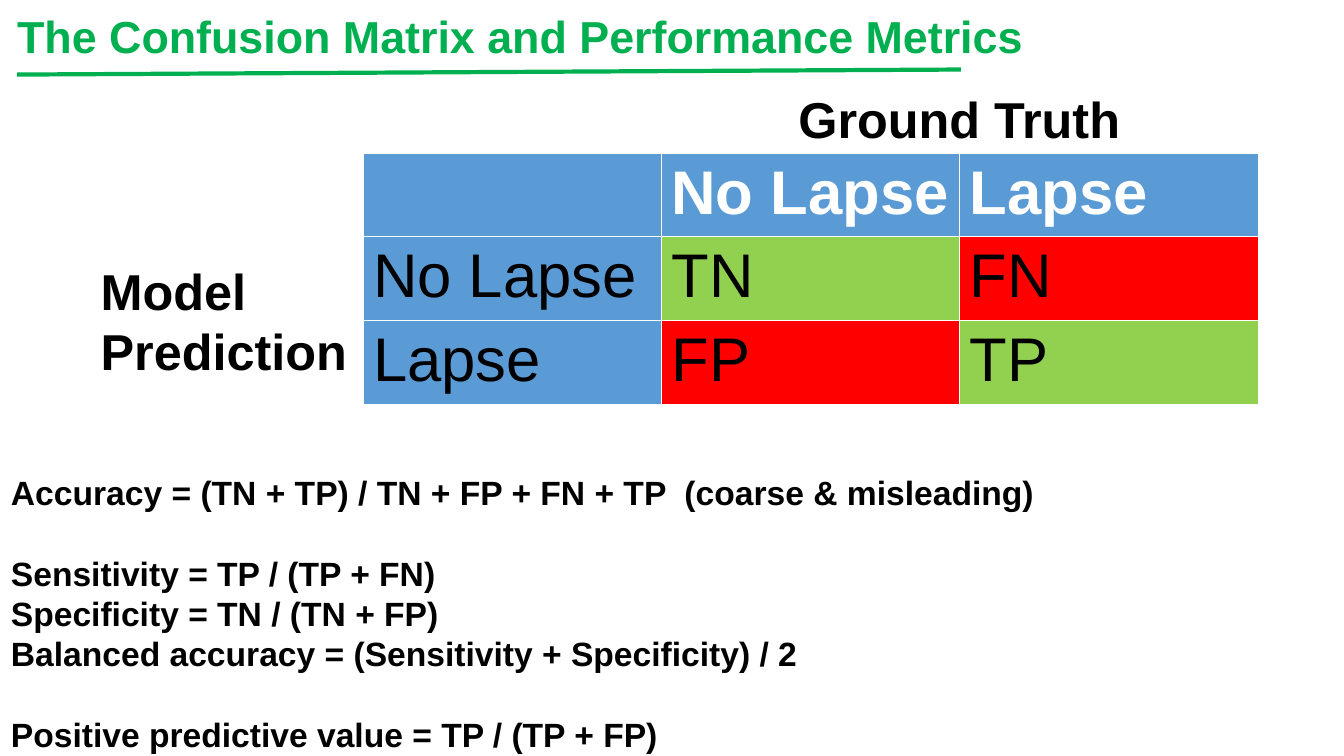
from pptx import Presentation
from pptx.dml.color import RGBColor
from pptx.enum.shapes import MSO_CONNECTOR as Conn
from pptx.enum.text import MSO_ANCHOR as Anchor, PP_ALIGN as Align
from pptx.oxml.ns import qn
from pptx.util import Inches, Pt

# Content
TITLE = "The Confusion Matrix and Performance Metrics"
TRUTH = ["Ground Truth"]
MODEL = ["Model", "Prediction"]
GRID = [
    [("", "blue"), ("No Lapse", "blue"), ("Lapse", "blue")],
    [("No Lapse", "blue"), ("TN", "lime"), ("FN", "red")],
    [("Lapse", "blue"), ("FP", "red"), ("TP", "lime")],
]
GROUPS = [
    ["Accuracy = (TN + TP) / TN + FP + FN + TP  (coarse & misleading)"],
    ["Sensitivity = TP / (TP + FN)",
     "Specificity = TN / (TN + FP)",
     "Balanced accuracy = (Sensitivity + Specificity) / 2"],
    ["Positive predictive value = TP / (TP + FP)"],
]
COLORS = {"green": "00B050", "blue": "5B9BD5", "lime": "92D050",
          "red": "FF0000", "black": "000000", "white": "FFFFFF"}
COL_W, ROW_H = 2.96, 0.83
GAP = 29  # points, one line of 24 pt text


def rgb(name):
    return RGBColor.from_string(COLORS[name])


def style(para, size, color="black", bold=True):
    font = para.font
    font.name, font.size, font.bold = "Arial", Pt(size), bold
    font.color.rgb = rgb(color)


def place(shape, *box):
    shape.left, shape.top, shape.width, shape.height = map(Inches, box)


def add_text(slide, box, groups, size, wrap):
    frame = slide.shapes.add_textbox(*map(Inches, box)).text_frame
    frame.word_wrap = wrap
    frame.text = "\n".join(line for group in groups for line in group)
    paras = iter(frame.paragraphs)
    for g, group in enumerate(groups):
        for n in range(len(group)):
            para = next(paras)
            style(para, size)
            if g and n == 0:
                para.space_before = Pt(GAP)


def add_grid(slide):
    rows, cols = len(GRID), len(GRID[0])
    table = slide.shapes.add_table(
        rows, cols, Inches(3.6), Inches(1.52),
        Inches(COL_W * cols), Inches(ROW_H * rows)).table
    for r, row in enumerate(GRID):
        for c, (text, fill) in enumerate(row):
            cell = table.cell(r, c)
            cell.fill.solid()
            cell.fill.fore_color.rgb = rgb(fill)
            if text:
                cell.text = text
                style(cell.text_frame.paragraphs[0], 44,
                      "black" if r else "white", r == 0)


def main():
    prs = Presentation()
    prs.slide_width, prs.slide_height = Inches(13.33), Inches(7.5)
    slide = prs.slides.add_slide(prs.slide_layouts[5])

    # Title and its rule
    title = slide.shapes.title
    place(title, 0.07, 0.04, 13, 0.64)
    title.text_frame.text = TITLE
    title.text_frame.vertical_anchor = Anchor.TOP
    para = title.text_frame.paragraphs[0]
    para.alignment = Align.LEFT
    style(para, 32, "green")
    rule = slide.shapes.add_connector(
        Conn.STRAIGHT, Inches(0.17), Inches(0.74), Inches(9.53), Inches(0.69))
    rule.line.color.rgb = rgb("green")
    rule.line.width = Pt(3)
    props = rule._element.spPr
    props.append(props.makeelement(qn("a:effectLst"), {}))

    # Matrix with its two axis labels
    add_grid(slide)
    add_text(slide, (7.82, 0.82, 3.43, 0.71), [TRUTH], 36, False)
    add_text(slide, (0.9, 2.53, 2.67, 1.31), [MODEL], 36, False)

    # Metric formulas
    add_text(slide, (0.01, 4.63, 12.75, 3.33), GROUPS, 24, True)
    prs.save("out.pptx")


if __name__ == "__main__":
    main()
